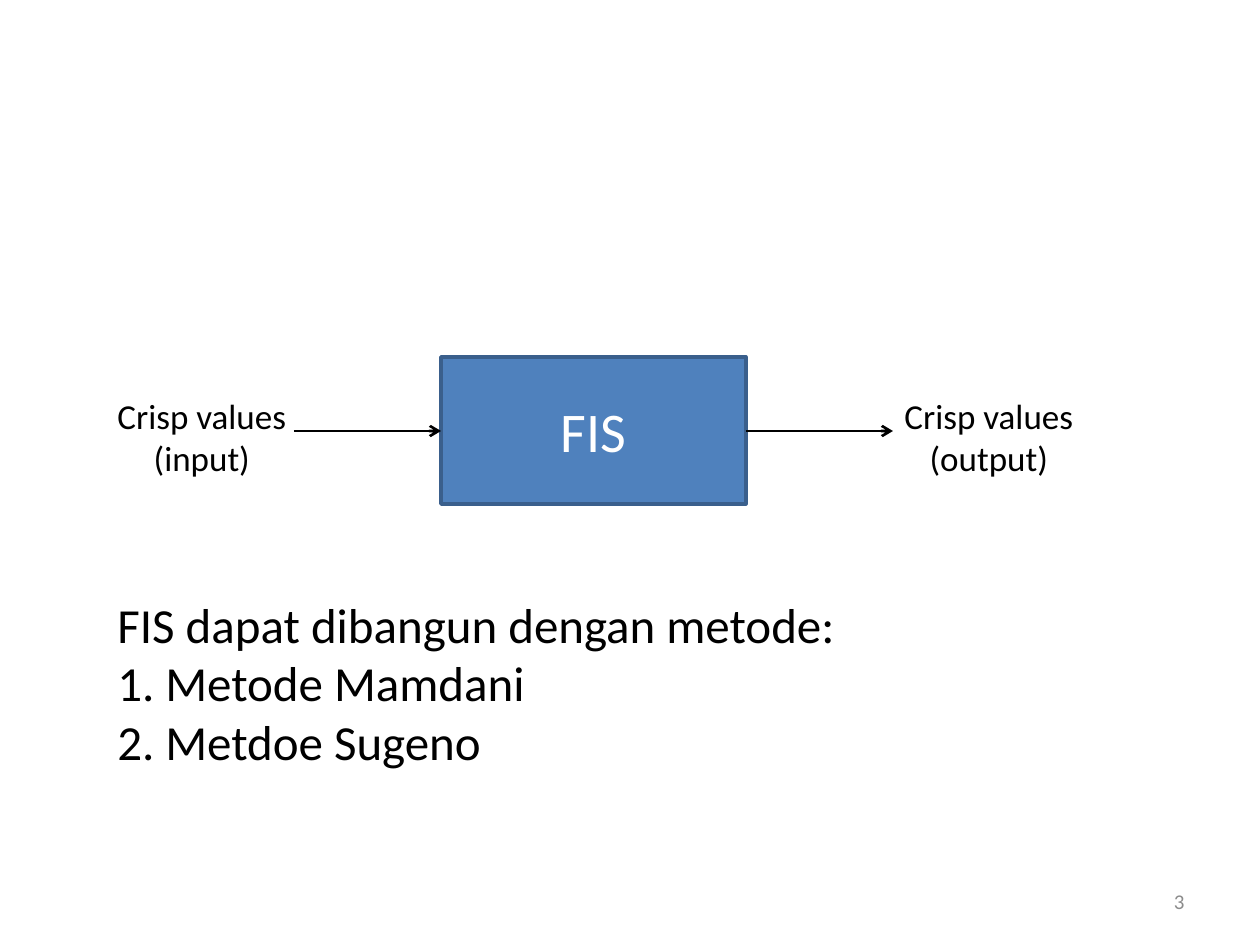
"""Build a slide on a fuzzy inference system (FIS) with its input, output and methods."""
import pptx
import pptx.util
import pptx.dml.color
import pptx.enum.shapes
import pptx.enum.text
import pptx.oxml.ns
import lxml.etree

SCALE = 914400 / 126
COLORS = {"black": "000000", "white": "FFFFFF", "blue": "4F81BD", "edge": "3A5F8C", "gray": "8C8C8C"}
ALIGN = pptx.enum.text.PP_ALIGN
ANCHOR = pptx.enum.text.MSO_ANCHOR
qn = pptx.oxml.ns.qn


def px(*lengths):
    return [round(length * SCALE) for length in lengths]


def write(shape, lines, size, color, aligns, anchor=ANCHOR.TOP, wrap=True):
    frame = shape.text_frame
    frame.word_wrap = wrap
    frame.vertical_anchor = anchor
    frame.text = "\n".join(lines)
    for para, align in zip(frame.paragraphs, aligns):
        para.alignment = align
        para.font.name = "Calibri"
        para.font.size = pptx.util.Pt(size)
        para.font.color.rgb = pptx.dml.color.RGBColor.from_string(COLORS[color])
    return frame


deck = pptx.Presentation()
deck.slide_width, deck.slide_height = px(1260, 945)
page = deck.slides.add_slide(deck.slide_layouts[6])

number = page.shapes.add_textbox(*px(903, 876, 294, 50))
write(number, ["3"], 12, "gray", [ALIGN.RIGHT], ANCHOR.MIDDLE)

system = page.shapes.add_shape(pptx.enum.shapes.MSO_SHAPE.RECTANGLE, *px(441, 357, 305, 147))
system.shadow.inherit = False
system.fill.solid()
system.fill.fore_color.rgb = pptx.dml.color.RGBColor.from_string(COLORS["blue"])
system.line.color.rgb = pptx.dml.color.RGBColor.from_string(COLORS["edge"])
system.line.width = pptx.util.Pt(2)
write(system, ["FIS"], 32, "white", [ALIGN.CENTER], ANCHOR.MIDDLE)

for start in (294, 746):
    arrow = page.shapes.add_connector(
        pptx.enum.shapes.MSO_CONNECTOR.STRAIGHT, *px(start, 431, start + 147, 431))
    arrow.line.color.rgb = pptx.dml.color.RGBColor.from_string(COLORS["black"])
    arrow.line.width = pptx.util.Pt(1.5)
    lxml.etree.SubElement(arrow.line._get_or_add_ln(), qn("a:tailEnd"), type="arrow")
    lxml.etree.SubElement(arrow._element.spPr, qn("a:effectLst"))

for left, role in ((105, "(input)"), (892, "(output)")):
    label = page.shapes.add_textbox(*px(left, 388, 195, 97))
    write(label, ["Crisp values", role], 20, "black", [ALIGN.LEFT, ALIGN.CENTER], wrap=False)

methods = page.shapes.add_textbox(*px(105, 588, 793, 190))
lines = ["FIS dapat dibangun dengan metode:", "Metode Mamdani", "Metdoe Sugeno"]
frame = write(methods, lines, 28, "black", [ALIGN.LEFT] * 3)
indent = px(48)[0]
for para in frame.paragraphs[1:]:
    properties = para._p.get_or_add_pPr()
    properties.set("marL", str(indent))
    properties.set("indent", str(-indent))
    bullet = lxml.etree.Element(qn("a:buAutoNum"), type="arabicPeriod")
    properties.insert(0, bullet)

deck.save("out.pptx")
